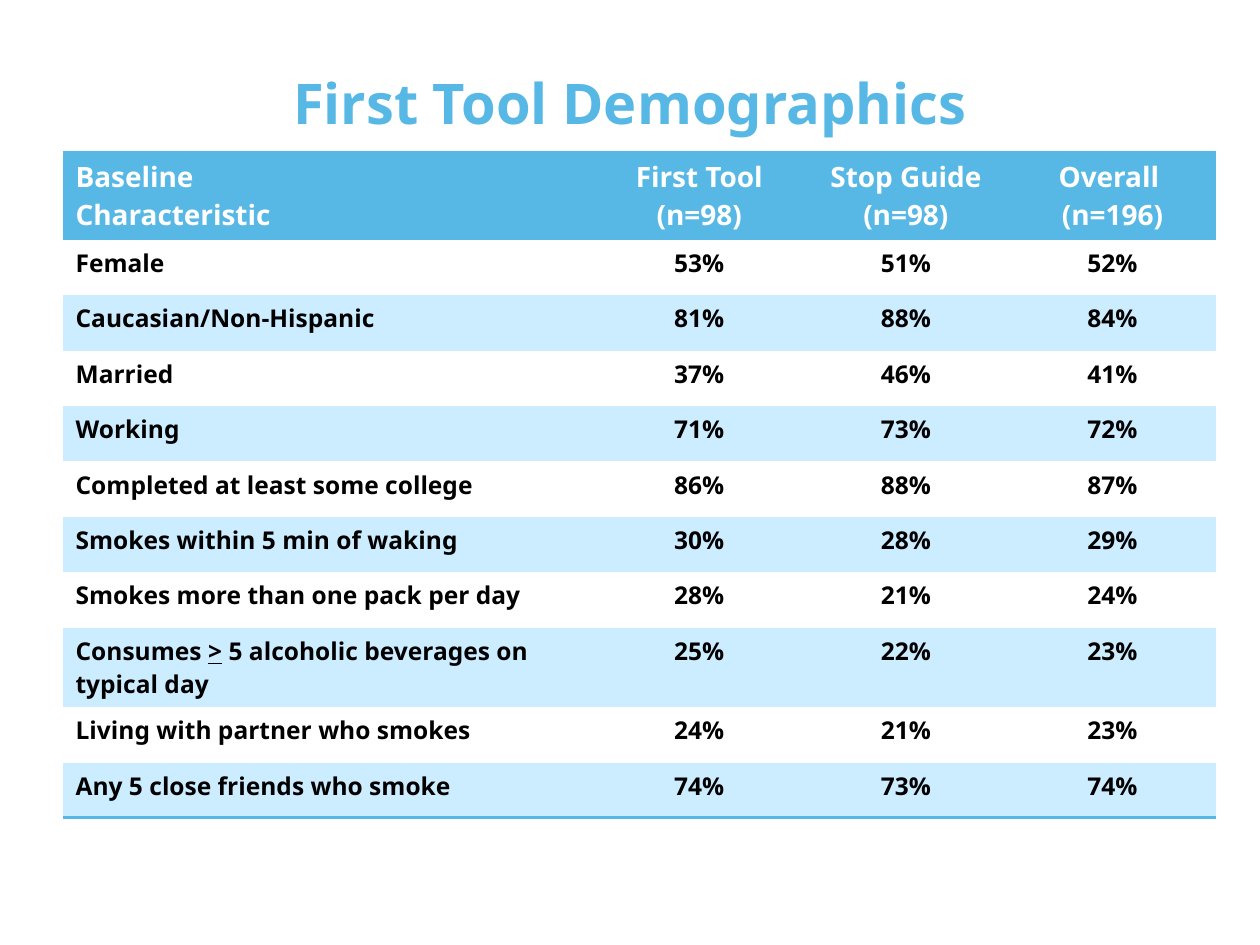
"""Build a slide with a table of baseline demographics."""
from lxml.etree import SubElement
from pptx import Presentation
from pptx.dml.color import RGBColor
from pptx.enum.text import MSO_ANCHOR, PP_ALIGN
from pptx.oxml import parse_xml
from pptx.oxml.ns import nsdecls, qn
from pptx.util import Inches, Pt

SKY = RGBColor(0x57, 0xB8, 0xE5)
PALE = RGBColor(0xCC, 0xEC, 0xFF)
WHITE = RGBColor(0xFF, 0xFF, 0xFF)
BLACK = RGBColor(0, 0, 0)

BASE = {"name": "Noto Sans", "bold": True}
TITLE = {**BASE, "size": Pt(32)}
HEAD = {**BASE, "size": Pt(16)}
BODY = {**BASE, "size": Pt(14)}
PLAIN = "{2D5ABB26-0587-4C30-8999-92F81FD0307C}"

LABEL, GROUP = 4.23, 1.64
TOP, ROW, TALL = 0.65, 0.44, 0.57
ROWS = [
    ("Baseline\nCharacteristic", "First Tool\n(n=98)", "Stop Guide\n(n=98)", "Overall \n(n=196)"),
    ("Female", "53%", "51%", "52%"),
    ("Caucasian/Non-Hispanic", "81%", "88%", "84%"),
    ("Married", "37%", "46%", "41%"),
    ("Working", "71%", "73%", "72%"),
    ("Completed at least some college", "86%", "88%", "87%"),
    ("Smokes within 5 min of waking", "30%", "28%", "29%"),
    ("Smokes more than one pack per day", "28%", "21%", "24%"),
    ("Consumes > 5 alcoholic beverages on typical day", "25%", "22%", "23%"),
    ("Living with partner who smokes", "24%", "21%", "23%"),
    ("Any 5 close friends who smoke", "74%", "73%", "74%"),
]


def add_run(para, text, form, color):
    """Add one formatted run to a paragraph."""
    run = para.add_run()
    run.text = text
    for key, value in form.items():
        setattr(run.font, key, value)
    run.font.color.rgb = color


def add_title(deck, slide, text):
    """Place and format the title across the full slide width."""
    title = slide.shapes.title
    place = {"left": 0, "top": int(deck.slide_height * 0.07),
             "width": deck.slide_width, "height": int(deck.slide_height * 0.08)}
    for key, value in place.items():
        setattr(title, key, value)
    frame = title.text_frame
    frame.vertical_anchor = MSO_ANCHOR.BOTTOM
    para = frame.paragraphs[0]
    para.alignment = PP_ALIGN.CENTER
    add_run(para, text, TITLE, SKY)


def fill_cell(cell, text, form, color, fill, align):
    """Write a cell, underlining any comparison sign."""
    cell.fill.solid()
    cell.fill.fore_color.rgb = fill
    frame = cell.text_frame
    for num, line in enumerate(text.split("\n")):
        para = frame.add_paragraph() if num else frame.paragraphs[0]
        para.alignment = align
        for part in filter(None, line.partition(">")):
            look = {**form, "underline": True} if part == ">" else form
            add_run(para, part, look, color)


def rule_cell(cell):
    """Draw a line along the bottom of a cell."""
    line = parse_xml(f'<a:lnB {nsdecls("a")} w="{Pt(2)}"/>')
    fill = SubElement(line, qn("a:solidFill"))
    SubElement(fill, qn("a:srgbClr"), val=str(SKY))
    cell._tc.get_or_add_tcPr().insert(0, line)


def add_grid(slide):
    """Add the table with a header and alternating row fills."""
    wide = [LABEL] + [GROUP] * 3
    high = [TOP] + [TALL if ">" in row[0] else ROW for row in ROWS[1:]]
    table = slide.shapes.add_table(
        len(high), len(wide), Inches(0.5), Inches(1.2),
        Inches(sum(wide)), Inches(sum(high))).table
    table.horz_banding = False
    table._tbl.tblPr.find(qn("a:tableStyleId")).text = PLAIN
    for col, size in zip(table.columns, wide):
        col.width = Inches(size)
    for num, (row, size) in enumerate(zip(table.rows, high)):
        row.height = Inches(size)
        form, color = (BODY, BLACK) if num else (HEAD, WHITE)
        fill = (WHITE if num % 2 else PALE) if num else SKY
        for pos, (cell, text) in enumerate(zip(row.cells, ROWS[num])):
            align = PP_ALIGN.CENTER if pos else PP_ALIGN.LEFT
            fill_cell(cell, text, form, color, fill, align)
            if not num:
                cell.vertical_anchor = MSO_ANCHOR.BOTTOM
            if num == len(ROWS) - 1:
                rule_cell(cell)


def main():
    """Build and save the deck."""
    deck = Presentation()
    deck.slide_width, deck.slide_height = Inches(10), Inches(7.5)
    slide = deck.slides.add_slide(deck.slide_layouts.get_by_name("Title Only"))
    add_title(deck, slide, "First Tool Demographics")
    add_grid(slide)
    deck.save("out.pptx")


if __name__ == "__main__":
    main()
